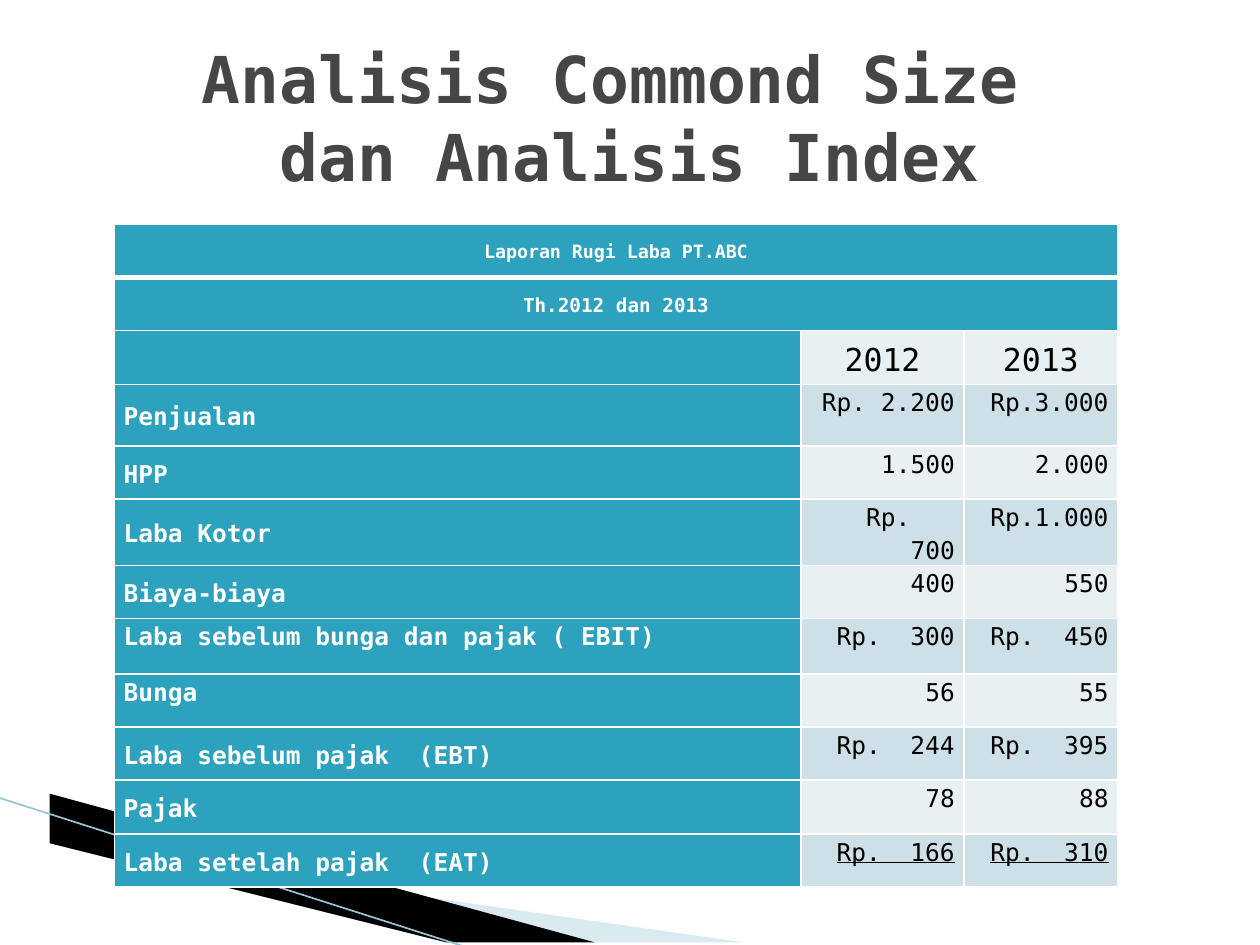
from lxml import etree
from pptx import Presentation
from pptx.dml.color import RGBColor
from pptx.enum.shapes import MSO_CONNECTOR
from pptx.enum.text import MSO_ANCHOR, PP_ALIGN
from pptx.oxml import parse_xml
from pptx.oxml.ns import nsdecls, qn
from pptx.util import Cm, Pt

FONT = "DejaVu Sans Mono"
TEAL, WHITE, BLACK = "2DA2BF", "FFFFFF", "000000"
BANDS = ["E8F0F4", "CDE0E8"]


def color(value):
    return RGBColor.from_string(value)


def fill_cell(cell, text, size, fill, font_color, bold, align, anchor, borders):
    cell.margin_left = cell.margin_right = Cm(0.18)
    cell.margin_top = cell.margin_bottom = 0
    cell.vertical_anchor = anchor
    paragraph = cell.text_frame.paragraphs[0]
    paragraph.text = text
    paragraph.alignment = align
    paragraph.line_spacing = 1.15
    for run in paragraph.runs:
        run.font.name = FONT
        run.font.size = Pt(size)
        run.font.bold = bold
        run.font.color.rgb = color(font_color)
    properties = cell._tc.get_or_add_tcPr()
    for side, width in zip(("L", "R", "T", "B"), borders):
        properties.append(parse_xml(
            f'<a:ln{side} {nsdecls("a")} w="{Pt(width)}"><a:solidFill>'
            f'<a:srgbClr val="{WHITE}"/></a:solidFill></a:ln{side}>'))
    cell.fill.solid()
    cell.fill.fore_color.rgb = color(fill)


presentation = Presentation()
presentation.slide_width, presentation.slide_height = Cm(25.4), Cm(19.05)
slide = presentation.slides.add_slide(presentation.slide_layouts[6])
shapes = slide.shapes

wedges = [
    ("A0CBDC", 40, [(1.4, 16.54), (15.11, 19.08), (11.58, 19.08), (1.4, 16.51)]),
    (BLACK, 100, [(1.35, 16.48), (11.61, 19.08), (9.45, 19.1), (1.37, 16.51)]),
]
for fill, opacity, points in wedges:
    builder = shapes.build_freeform(*points[0], scale=Cm(1))
    builder.add_line_segments(points[1:], close=True)
    wedge = builder.convert_to_shape()
    wedge.shadow.inherit = False
    wedge.fill.solid()
    wedge.fill.fore_color.rgb = color(fill)
    wedge.line.fill.background()
    if opacity < 100:
        shade = wedge._element.spPr.find(qn("a:solidFill"))[0]
        etree.SubElement(shade, qn("a:alpha")).set("val", str(opacity * 1000))

edge = shapes.add_connector(MSO_CONNECTOR.STRAIGHT, Cm(-0.03), Cm(16.08), Cm(9.42), Cm(19.1))
edge.line.color.rgb = color("97C5D8")
edge.line.width = Pt(0.95)
etree.SubElement(edge._element.spPr, qn("a:effectLst"))

headings = [("Laporan Rugi Laba PT.ABC", 10.5), ("Th.2012 dan 2013", 11)]
statement = [
    ("", "2012", "2013"),
    ("Penjualan", "Rp. 2.200", "Rp.3.000"),
    ("HPP", "1.500", "2.000"),
    ("Laba Kotor", "Rp.    700", "Rp.1.000"),
    ("Biaya-biaya", "400", "550"),
    ("Laba sebelum bunga dan pajak ( EBIT)", "Rp.  300", "Rp.  450"),
    ("Bunga", "56", "55"),
    ("Laba sebelum pajak  (EBT)", "Rp.  244", "Rp.  395"),
    ("Pajak", "78", "88"),
    ("Laba setelah pajak  (EAT)", "Rp.  166", "Rp.  310"),
]
column_widths = [13.84, 3.28, 3.1]
row_heights = [1.07, 1.07, 1.09, 1.24, 1.07, 1.24, 1.07, 1.12, 1.07, 1.07, 1.09, 1.07]

frame = shapes.add_table(len(row_heights), len(column_widths), Cm(2.31), Cm(4.52),
                         Cm(sum(column_widths)), Cm(sum(row_heights)))
table = frame.table
for column, width in zip(table.columns, column_widths):
    column.width = Cm(width)
for row, height in zip(table.rows, row_heights):
    row.height = Cm(height)

for index, (heading, size) in enumerate(headings):
    borders = (1, 1, 1, 3) if index == 0 else (1, 1, 3, 1)
    for column in range(3):
        fill_cell(table.cell(index, column), heading if column == 0 else "", size, TEAL,
                  WHITE, True, PP_ALIGN.CENTER, MSO_ANCHOR.MIDDLE, borders)
    table.cell(index, 0).merge(table.cell(index, 2))

for index, (label, *amounts) in enumerate(statement):
    row = index + len(headings)
    label_anchor = MSO_ANCHOR.TOP if label.endswith("EBIT)") or label == "Bunga" else MSO_ANCHOR.MIDDLE
    fill_cell(table.cell(row, 0), label, 14, TEAL, WHITE, True,
              PP_ALIGN.LEFT, label_anchor, (1, 1, 1, 1))
    is_year = index == 0
    for column, amount in enumerate(amounts, 1):
        fill_cell(table.cell(row, column), amount, 18 if is_year else 14, BANDS[index % 2],
                  BLACK, False, PP_ALIGN.CENTER if is_year else PP_ALIGN.RIGHT,
                  MSO_ANCHOR.MIDDLE if is_year else MSO_ANCHOR.TOP, (1, 1, 1, 1))

for column in (1, 2):
    total = table.cell(len(row_heights) - 1, column)
    total.text_frame.paragraphs[0].runs[0].font.underline = True

title = shapes.add_textbox(Cm(1.27), Cm(0.76), Cm(22.86), Cm(3.18))
title.text_frame.word_wrap = True
title.text_frame.vertical_anchor = MSO_ANCHOR.MIDDLE
paragraph = title.text_frame.paragraphs[0]
paragraph.text = "Analisis Commond Size \vdan Analisis Index"
paragraph.alignment = PP_ALIGN.CENTER
for run in paragraph.runs:
    run.font.name = FONT
    run.font.size = Pt(36.9)
    run.font.bold = True
    run.font.color.rgb = color("464646")

presentation.save("out.pptx")
